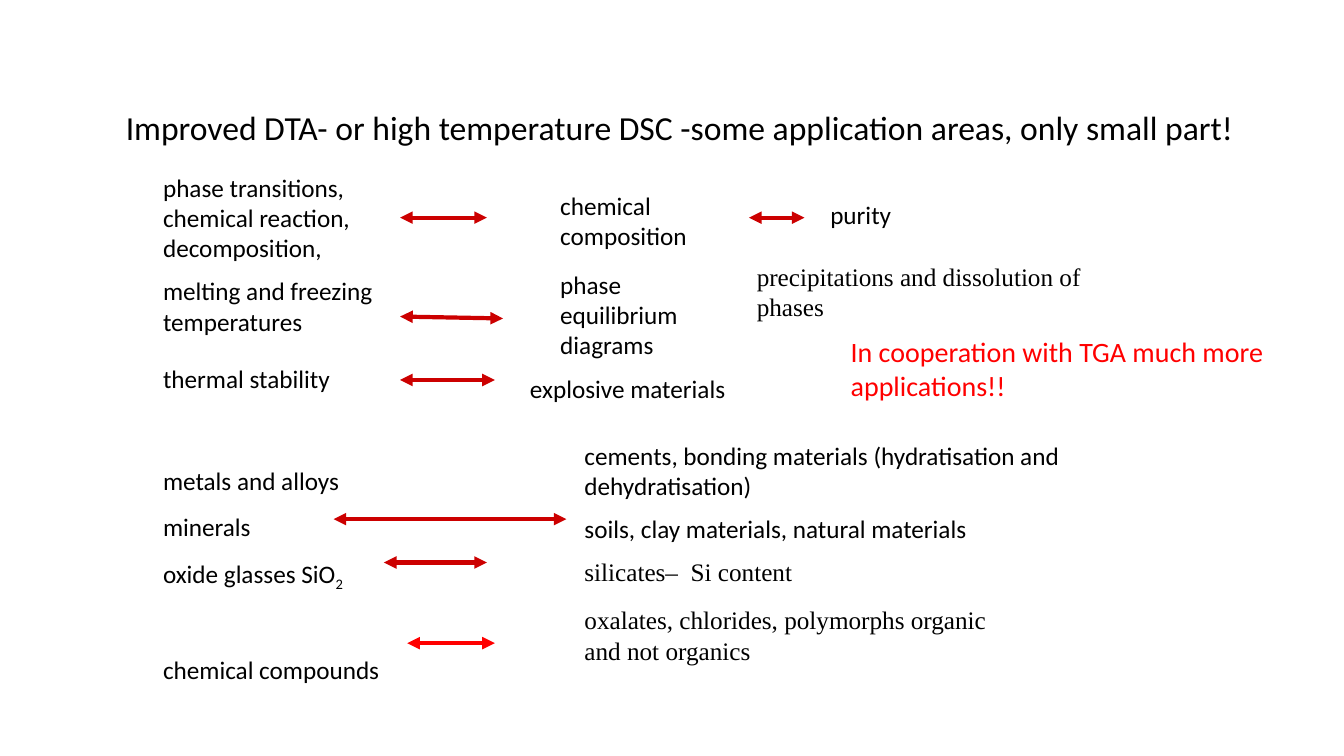
from dataclasses import dataclass

from lxml.etree import SubElement
from pptx import Presentation
from pptx.dml.color import RGBColor as Color
from pptx.enum.shapes import MSO_CONNECTOR as Connector
from pptx.enum.text import MSO_ANCHOR as Anchor, MSO_AUTO_SIZE as AutoSize, PP_ALIGN as Align
from pptx.oxml.ns import qn
from pptx.util import Pt


@dataclass(frozen=True)
class Theme:
    ink: Color = Color(0, 0, 0)
    arrow: Color = Color(0xCC, 0, 0)
    accent: Color = Color(0xFF, 0, 0)
    sans: str = "Calibri"
    serif: str = "Times New Roman"
    title_size: int = 24
    note_size: int = 20
    body_size: int = 18
    arrow_width: int = 3
    paragraph_gap: int = 9


class SlideBuilder:
    def __init__(self, slide, theme):
        self.slide = slide
        self.theme = theme

    def add_run(self, paragraph, text, font=None, size=None, color=None):
        run = paragraph.add_run()
        run.text = text
        run.font.name = font or self.theme.sans
        run.font.size = Pt(size or self.theme.body_size)
        run.font.color.rgb = color or self.theme.ink
        return run

    def add_box(self, left, top, width, height):
        frame = self.slide.shapes.add_textbox(Pt(left), Pt(top), Pt(width), Pt(height)).text_frame
        frame.word_wrap = True
        return frame

    def add_title(self, text, left, top, width, height, indent):
        frame = self.add_box(left, top, width, height)
        frame.vertical_anchor = Anchor.MIDDLE
        paragraph = frame.paragraphs[0]
        paragraph.alignment = Align.JUSTIFY
        paragraph.line_spacing = 1.5
        properties = paragraph._p.get_or_add_pPr()
        properties.set("marL", str(Pt(indent)))
        properties.set("indent", "0")
        self.add_run(paragraph, text, size=self.theme.title_size)

    def add_text(self, texts, left, top, width, height, gap=None, spacing=None, **style):
        """Put one paragraph per text into a box and return the paragraphs."""
        frame = self.add_box(left, top, width, height)
        frame.auto_size = AutoSize.SHAPE_TO_FIT_TEXT
        for index, text in enumerate(texts):
            paragraph = frame.add_paragraph() if index else frame.paragraphs[0]
            if index:
                paragraph.space_before = Pt(self.theme.paragraph_gap if gap is None else gap)
            if spacing:
                paragraph.line_spacing = spacing
            self.add_run(paragraph, text, **style)
        return frame.paragraphs

    def add_double_arrow(self, left, right, start_y, end_y=None, color=None):
        end_y = start_y if end_y is None else end_y
        connector = self.slide.shapes.add_connector(
            Connector.STRAIGHT, Pt(left), Pt(start_y), Pt(right), Pt(end_y))
        connector.line.color.rgb = color or self.theme.arrow
        connector.line.width = Pt(self.theme.arrow_width)
        line = connector.line._get_or_add_ln()
        for end in ("a:headEnd", "a:tailEnd"):
            SubElement(line, qn(end), type="triangle")
        SubElement(connector._element.spPr, qn("a:effectLst"))


def main():
    presentation = Presentation()
    presentation.slide_width, presentation.slide_height = Pt(960), Pt(540)
    slide = presentation.slides.add_slide(presentation.slide_layouts[6])
    theme = Theme()
    builder = SlideBuilder(slide, theme)
    left_column, middle_column, right_column = 109.4, 393.1, 410.4
    arrow_left = 285.8

    builder.add_title("Improved DTA- or high temperature DSC -some application areas, only small part!",
                      64.8, 59, 828, 49.7, indent=18)

    # Phenomena and what they reveal
    builder.add_text(["phase transitions, chemical reaction, decomposition,",
                      "melting and freezing temperatures"], left_column, 119.5, 193, 127.4)
    builder.add_text(["thermal stability"], left_column, 255.6, 153.4, 29)
    builder.add_text(["chemical composition"], middle_column, 132.5, 141.8, 51)
    builder.add_text(["phase equilibrium diagrams"], middle_column, 188.6, 141.8, 72.7)
    builder.add_text(["explosive materials"], 371.5, 262.8, 187.2, 29)
    builder.add_text(["purity"], 586, 139, 153.4, 29)
    builder.add_text(["precipitations and dissolution of phases"], 533.5, 182.9, 256.3, 51,
                     font=theme.serif)
    builder.add_text(["In cooperation with TGA much more applications!!"], 600.5, 235.4, 344.9, 55.4,
                     size=theme.note_size, color=theme.accent)

    # Material groups and examples
    materials = builder.add_text(
        ["metals and alloys", "minerals", "oxide glasses SiO", "chemical compounds"],
        left_column, 318.2, 175.7, 159.8, gap=0, spacing=1.5)
    subscript = builder.add_run(materials[2], "2")
    subscript.font._element.set("baseline", "-25000")
    materials[3].space_before = Pt(33)

    examples = builder.add_text(
        ["cements, bonding materials (hydratisation and dehydratisation)",
         "soils, clay materials, natural materials", "silicates–  Si content"],
        right_column, 311, 424.8, 149)
    examples[2].runs[0].font.name = theme.serif
    builder.add_text(["oxalates, chlorides, polymorphs organic and not organics"],
                     right_column, 428.4, 329, 51, font=theme.serif)

    builder.add_double_arrow(arrow_left, 347.8, 155.5)
    builder.add_double_arrow(535, 574.6, 155.5)
    builder.add_double_arrow(arrow_left, 359.3, 226.1, 227.5)
    builder.add_double_arrow(arrow_left, 353.5, 271.4)
    builder.add_double_arrow(238.3, 404.6, 370.8)
    builder.add_double_arrow(274.3, 347.8, 401.8)
    builder.add_double_arrow(290.9, 353.5, 459.4, color=theme.accent)

    presentation.save("out.pptx")


if __name__ == "__main__":
    main()
